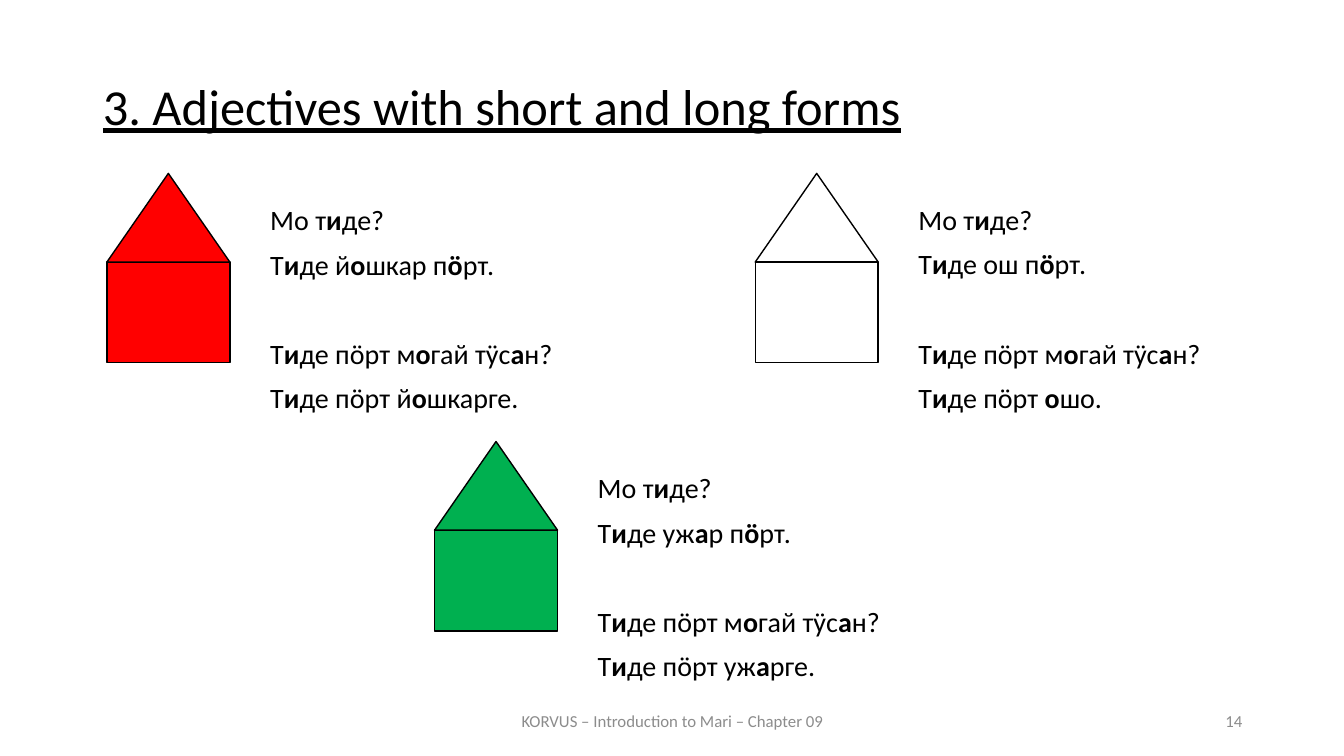
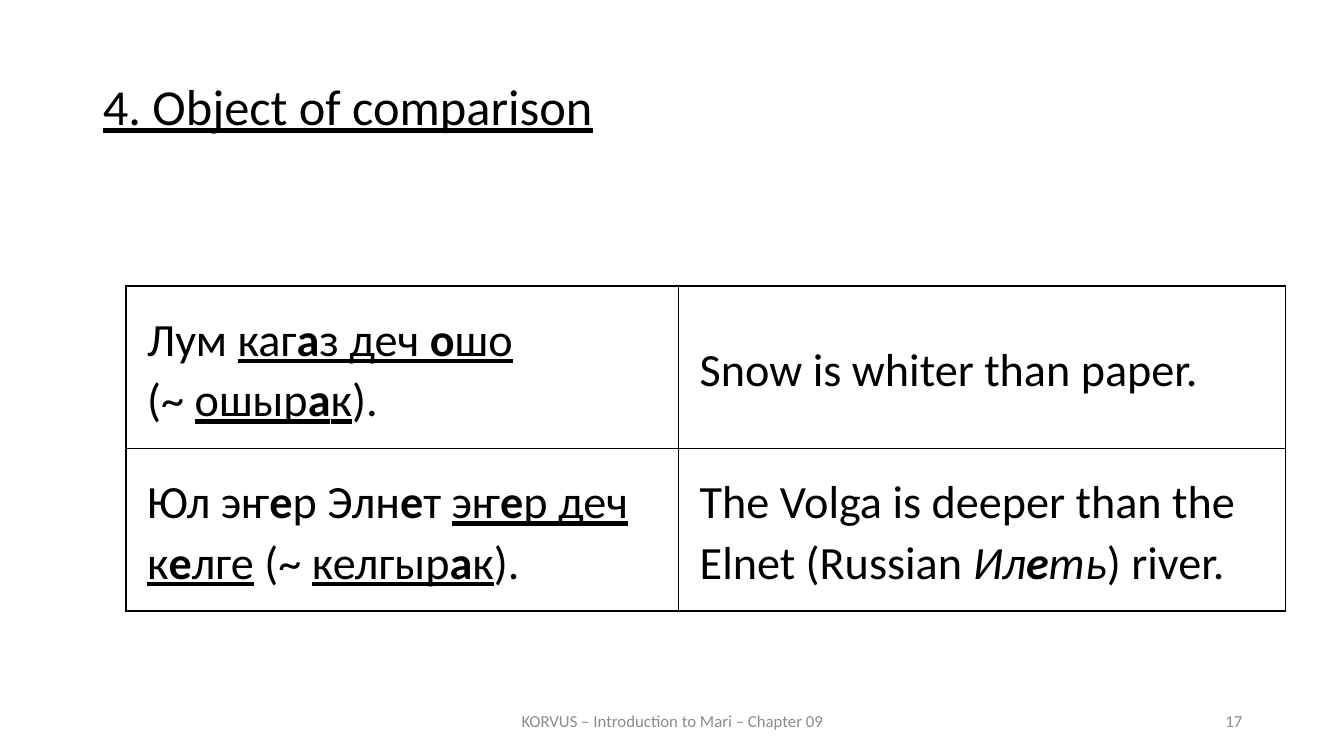
from itertools import groupby

from lxml.etree import SubElement
from pptx import Presentation
from pptx.dml.color import RGBColor
from pptx.enum.shapes import MSO_SHAPE
from pptx.enum.text import MSO_ANCHOR, MSO_AUTO_SIZE, PP_ALIGN
from pptx.oxml.ns import qn
from pptx.util import Inches, Pt

BLACK = RGBColor(0x00, 0x00, 0x00)
GREY = RGBColor(0x8C, 0x8C, 0x8C)
RED = RGBColor(0xFF, 0x00, 0x00)
GREEN = RGBColor(0x00, 0xB0, 0x50)

FONT = "Calibri"
FOOTER = "KORVUS – Introduction to Mari – Chapter 09"
MARKS = {"*": "bold", "_": "underline", "/": "italic"}

HOUSE_WIDTH, ROOF_HEIGHT, WALL_HEIGHT = 1.22, 0.88, 1
CAPTION_DX, CAPTION_DY = 1.52, 0.28

HOUSES = [
    (1.06, 1.72, RED, "Т*и*де й*о*шкар п*ӧ*рт.", "Т*и*де пӧрт й*о*шкарге."),
    (4.31, 4.38, GREEN, "Т*и*де уж*а*р п*ӧ*рт.", "Т*и*де пӧрт уж*а*рге."),
    (7.49, 1.72, None, "Т*и*де ош п*ӧ*рт.", "Т*и*де пӧрт *о*шо."),
]

COMPARISONS = [
    ("Лум _каг*а*з деч *о*шо_\n(~ _ошыр*а*к_).", "Snow is whiter than paper."),
    ("Юл эҥ*е*р Элн*е*т _эҥ*е*р деч к*е*лге_ (~ _келгыр*а*к_).",
     "The Volga is deeper than the Elnet (Russian /Ил*е*ть/) river."),
]


def style_font(font, size, color=BLACK):
    font.name = FONT
    font.size = Pt(size)
    font.color.rgb = color


def write_marked(paragraph, marked, size):
    active = dict.fromkeys(MARKS.values(), False)
    for symbol, chars in groupby(marked, lambda c: c if c in MARKS or c == "\n" else ""):
        if symbol == "\n":
            paragraph.add_line_break()
        elif symbol:
            active[MARKS[symbol]] = not active[MARKS[symbol]]
        else:
            run = paragraph.add_run()
            run.text = "".join(chars)
            style_font(run.font, size)
            for attribute, value in active.items():
                setattr(run.font, attribute, value)


def place(shape, left, top, width, height):
    shape.left, shape.top = Inches(left), Inches(top)
    shape.width, shape.height = Inches(width), Inches(height)


def prepare_frame(frame, anchor):
    frame.word_wrap = True
    frame.auto_size = MSO_AUTO_SIZE.NONE
    frame.vertical_anchor = anchor


def add_footer_part(slide, text, left, width, align):
    part = slide.shapes.add_textbox(Inches(left), Inches(6.95), Inches(width), Inches(0.4))
    prepare_frame(part.text_frame, MSO_ANCHOR.MIDDLE)
    part.text_frame.text = text
    paragraph = part.text_frame.paragraphs[0]
    paragraph.alignment = align
    style_font(paragraph.runs[0].font, 12, GREY)


def add_framed_slide(prs, layout, heading, number):
    slide = prs.slides.add_slide(prs.slide_layouts[layout])
    title = slide.shapes.title
    place(title, 0.92, 0.76, 11.5, 0.83)
    prepare_frame(title.text_frame, MSO_ANCHOR.TOP)
    title.text_frame.text = heading
    paragraph = title.text_frame.paragraphs[0]
    paragraph.alignment = PP_ALIGN.LEFT
    paragraph.line_spacing = 0.9
    font = paragraph.runs[0].font
    style_font(font, 36)
    font.underline = True
    add_footer_part(slide, FOOTER, 4.42, 4.5, PP_ALIGN.CENTER)
    add_footer_part(slide, str(number), 9.42, 3, PP_ALIGN.RIGHT)
    return slide


def add_house(slide, left, top, color):
    parts = [
        (MSO_SHAPE.RECTANGLE, top + ROOF_HEIGHT, WALL_HEIGHT),
        (MSO_SHAPE.ISOSCELES_TRIANGLE, top, ROOF_HEIGHT),
    ]
    for preset, part_top, height in parts:
        part = slide.shapes.add_shape(
            preset, Inches(left), Inches(part_top), Inches(HOUSE_WIDTH), Inches(height))
        part.shadow.inherit = False
        part.line.color.rgb = BLACK
        part.line.width = Pt(1)
        if color is None:
            part.fill.background()
        else:
            part.fill.solid()
            part.fill.fore_color.rgb = color


def fill_caption(caption, left, top, short_answer, long_answer):
    place(caption, left, top, 3.26, 2.3)
    frame = caption.text_frame
    prepare_frame(frame, MSO_ANCHOR.TOP)
    lines = [
        ("Мо т*и*де?", 10),
        (short_answer, 10),
        ("Т*и*де пӧрт м*о*гай тӱс*а*н?", 42),
        (long_answer, 10),
    ]
    for index, (line, gap) in enumerate(lines):
        paragraph = frame.add_paragraph() if index else frame.paragraphs[0]
        paragraph.line_spacing = 0.9
        paragraph.space_before = Pt(gap)
        properties = paragraph._p.get_or_add_pPr()
        properties.set("marL", "0")
        properties.set("indent", "0")
        SubElement(properties, qn("a:buNone"))
        write_marked(paragraph, line, 20)


def build_houses(prs):
    slide = add_framed_slide(prs, 1, "3. Adjectives with short and long forms", 14)
    for index, (left, top, color, short_answer, long_answer) in enumerate(HOUSES):
        add_house(slide, left, top, color)
        caption = slide.shapes.add_textbox(0, 0, 0, 0) if index else slide.placeholders[1]
        fill_caption(caption, left + CAPTION_DX, top + CAPTION_DY, short_answer, long_answer)


def set_borders(cell, widths):
    properties = cell._tc.get_or_add_tcPr()
    for side, width in zip("LRTB", widths):
        border = SubElement(properties, qn(f"a:ln{side}"), w=str(Pt(width)))
        fill = SubElement(border, qn("a:solidFill"))
        SubElement(fill, qn("a:srgbClr"), val=str(BLACK))


def add_comparison_table(slide, left, top, column_widths, row_height):
    rows, columns = len(COMPARISONS), len(column_widths)
    table = slide.shapes.add_table(
        rows, columns, Inches(left), Inches(top),
        Inches(sum(column_widths)), Inches(row_height * rows)).table
    table.first_row = table.horz_banding = False
    for column, width in zip(table.columns, column_widths):
        column.width = Inches(width)
    for r, sentences in enumerate(COMPARISONS):
        table.rows[r].height = Inches(row_height)
        for c, sentence in enumerate(sentences):
            cell = table.cell(r, c)
            outer_sides = (c == 0, c == columns - 1, r == 0, r == rows - 1)
            set_borders(cell, [1.5 if outer else 1 for outer in outer_sides])
            cell.fill.background()
            cell.vertical_anchor = MSO_ANCHOR.MIDDLE
            cell.margin_left = cell.margin_right = Inches(0.21)
            cell.margin_top, cell.margin_bottom = Inches(0.03), 0
            paragraph = cell.text_frame.paragraphs[0]
            paragraph.line_spacing = 1.07
            write_marked(paragraph, sentence, 33)


def build_comparison(prs):
    slide = add_framed_slide(prs, 5, "4. Object of comparison", 17)
    add_comparison_table(slide, 1.25, 2.84, (5.48, 6.02), 1.61)


def main():
    prs = Presentation()
    prs.slide_width, prs.slide_height = Inches(13.33), Inches(7.5)
    build_houses(prs)
    build_comparison(prs)
    prs.save("out.pptx")


if __name__ == "__main__":
    main()
